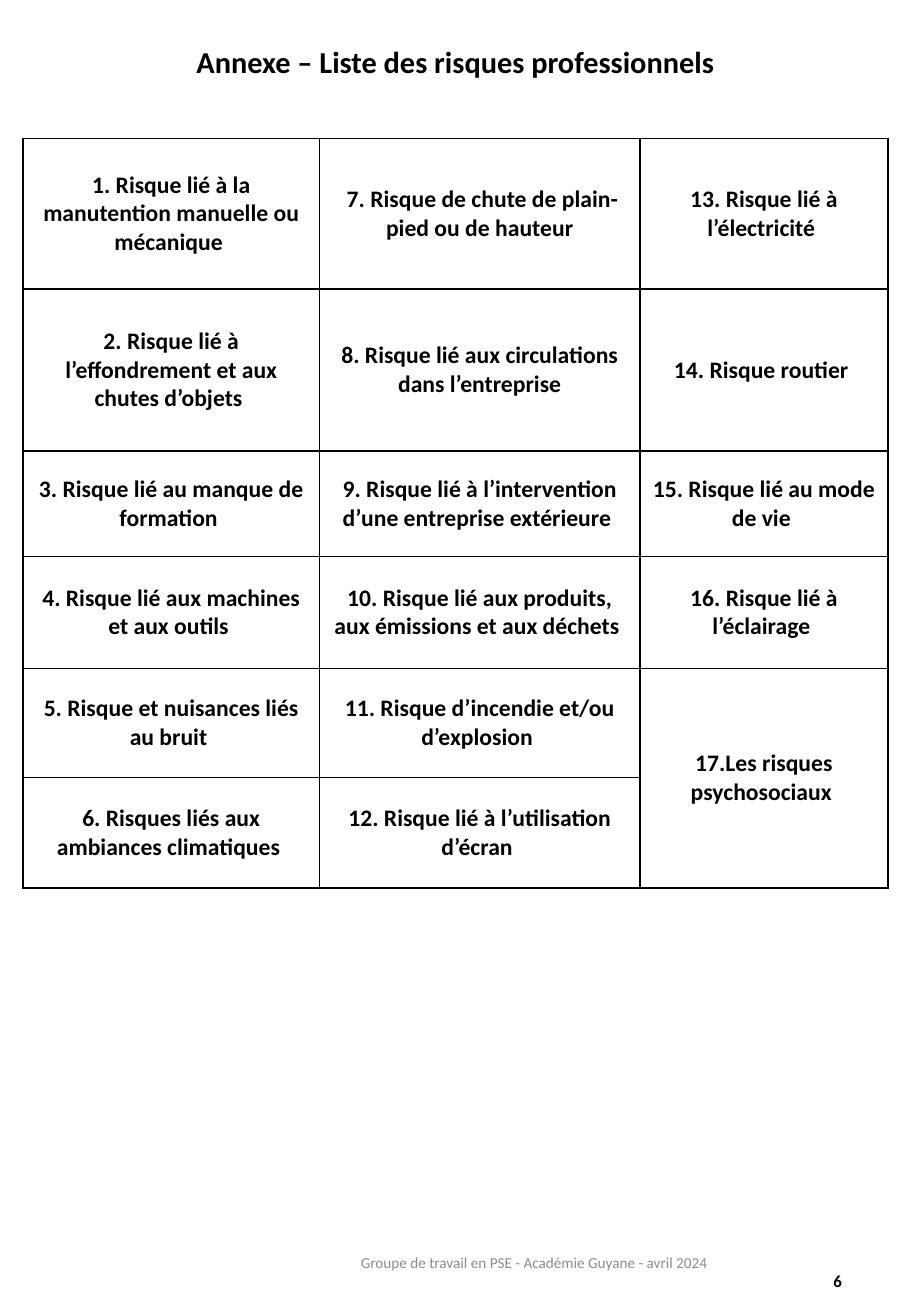
"""Build the one-page annex listing occupational risks."""
import pptx
import pptx.dml.color
import pptx.enum.text
import pptx.oxml
import pptx.oxml.ns
import pptx.util

TITLE = "Annexe – Liste des risques professionnels"
RISKS = [
    "1. Risque lié à la manutention manuelle ou mécanique ",
    "2. Risque lié à l’effondrement et aux chutes d’objets ",
    "3. Risque lié au manque de formation ",
    "4. Risque lié aux machines et aux outils ",
    "5. Risque et nuisances liés au bruit ",
    "6. Risques liés aux ambiances climatiques ",
    " 7. Risque de chute de plain-pied ou de hauteur",
    "8. Risque lié aux circulations dans l’entreprise",
    "9. Risque lié à l’intervention d’une entreprise extérieure ",
    "10. Risque lié aux produits, aux émissions et aux déchets ",
    "11. Risque d’incendie et/ou d’explosion ",
    "12. Risque lié à l’utilisation d’écran ",
    "13. Risque lié à l’électricité ",
    "14. Risque routier ",
    "15. Risque lié au mode de vie ",
    "16. Risque lié à l’éclairage ",
    "17.Les risques psychosociaux ",
]
FOOTER = "Groupe de travail en PSE - Académie Guyane - avril 2024"
PAGE = "6"

PX = 9144
SLIDE = (750, 1083)
TITLE_BOX = (73, 15, 604, 56)
TABLE_AT = (19, 114)
COLS = (244, 264, 204)
ROWS = (124, 133, 87, 92, 90, 91)
PAGE_BOX = (534, 1025, 169, 58)
FOOTER_BOX = (261, 1010, 357, 58)
CELL_INSETS = {"margin_left": 7, "margin_right": 7, "margin_top": 0, "margin_bottom": 0}

ALIGN = pptx.enum.text.PP_ALIGN
ANCHOR = pptx.enum.text.MSO_ANCHOR
THEME = {
    "font": "Calibri",
    "ink": "000000",
    "paper": "FFFFFF",
    "border": pptx.util.Pt(1),
    "title": {"size": 18, "bold": True, "color": "000000"},
    "risk": {"size": 14, "bold": True, "color": "000000"},
    "page": {"size": 10, "bold": True, "color": "000000"},
    "footer": {"size": 9, "bold": False, "color": "8C8C8C"},
}


def rgb(value):
    return pptx.dml.color.RGBColor.from_string(value)


def emu(lengths):
    return [n * PX for n in lengths]


def write(tf, text, style, align=ALIGN.CENTER):
    look = THEME[style]
    p = tf.paragraphs[0]
    p.alignment = align
    r = p.add_run()
    r.text = text
    font = {"name": THEME["font"], "size": pptx.util.Pt(look["size"]), "bold": look["bold"]}
    for key, value in font.items():
        setattr(r.font, key, value)
    r.font.color.rgb = rgb(look["color"])
    return p


def set_frame(tf, anchor):
    frame = {"word_wrap": True, "auto_size": pptx.enum.text.MSO_AUTO_SIZE.NONE, "vertical_anchor": anchor}
    for key, value in frame.items():
        setattr(tf, key, value)


def add_title(slide):
    sp = slide.shapes.title
    for key, value in zip(("left", "top", "width", "height"), emu(TITLE_BOX)):
        setattr(sp, key, value)
    set_frame(sp.text_frame, ANCHOR.BOTTOM)
    write(sp.text_frame, TITLE, "title").line_spacing = 0.9


def add_label(slide, box, text, style, align):
    tf = slide.shapes.add_textbox(*emu(box)).text_frame
    set_frame(tf, ANCHOR.MIDDLE)
    write(tf, text, style, align)


def format_cell(cell):
    cell.fill.solid()
    cell.fill.fore_color.rgb = rgb(THEME["paper"])
    cell.vertical_anchor = ANCHOR.MIDDLE
    for key, value in CELL_INSETS.items():
        setattr(cell, key, value * PX)
    tc_pr = cell._tc.get_or_add_tcPr()
    for i, side in enumerate("LRTB"):
        tc_pr.insert(i, pptx.oxml.parse_xml(
            f'<a:ln{side} {pptx.oxml.ns.nsdecls("a")} w="{THEME["border"]}"><a:solidFill>'
            f'<a:srgbClr val="{THEME["ink"]}"/></a:solidFill></a:ln{side}>'))


def add_risks(slide):
    size = (sum(COLS), sum(ROWS))
    table = slide.shapes.add_table(len(ROWS), len(COLS), *emu(TABLE_AT + size)).table
    table.first_row = table.horz_banding = False
    for col, width in zip(table.columns, emu(COLS)):
        col.width = width
    for row, height in zip(table.rows, emu(ROWS)):
        row.height = height
    for cell in table.iter_cells():
        format_cell(cell)
    for i, risk in enumerate(RISKS):
        col, row = divmod(i, len(ROWS))
        write(table.cell(row, col).text_frame, risk, "risk")
    table.cell(row, col).merge(table.cell(len(ROWS) - 1, col))


def main():
    prs = pptx.Presentation()
    prs.slide_width, prs.slide_height = emu(SLIDE)
    slide = prs.slides.add_slide(prs.slide_layouts[5])
    add_title(slide)
    add_risks(slide)
    add_label(slide, PAGE_BOX, PAGE, "page", ALIGN.RIGHT)
    add_label(slide, FOOTER_BOX, FOOTER, "footer", ALIGN.CENTER)
    prs.save("out.pptx")


if __name__ == "__main__":
    main()
